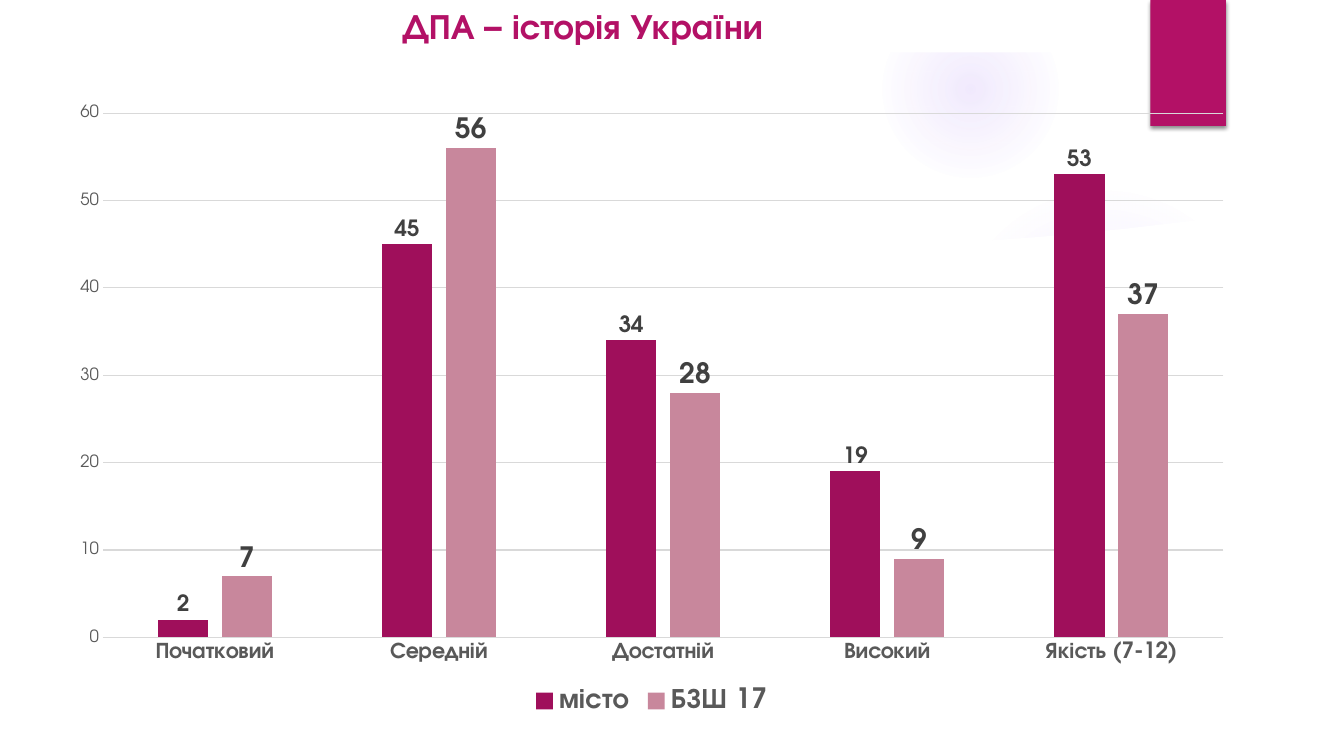
"""Build a slide with a clustered column chart of history exam results."""
import lxml.etree
import pptx
import pptx.chart.data
import pptx.dml.color
import pptx.enum.chart
import pptx.enum.text
import pptx.oxml
import pptx.oxml.ns
import pptx.util
from pptx.util import Inches

RGBColor = pptx.dml.color.RGBColor
MAGENTA = RGBColor(0xB3, 0x11, 0x66)
CITY = RGBColor(0x9F, 0x0F, 0x5B)
SCHOOL = RGBColor(0xC8, 0x87, 0x9C)
GLOW = RGBColor(0x9B, 0x6B, 0xF2)
WHITE = RGBColor(0xFF, 0xFF, 0xFF)
BLACK = RGBColor(0, 0, 0)
AXIS_TEXT = RGBColor(0x59, 0x59, 0x59)
LABEL_TEXT = RGBColor(0x40, 0x40, 0x40)
GRID = RGBColor(0xD9, 0xD9, 0xD9)
FONT = "TeX Gyre Adventor"
NAMESPACE = pptx.oxml.ns.nsdecls("a")

LEVELS = ["Початковий", "Середній", "Достатній", "Високий", "Якість (7-12)"]
RESULTS = [
    ("місто", [2, 45, 34, 19, 53], CITY, 16),
    ("БЗШ 17", [7, 56, 28, 9, 37], SCHOOL, 20),
]
PANEL_CURVE = [
    (12.84, 2.04), (12, 2.17), (11.16, 2.27), (10.32, 2.35), (9.49, 2.41),
    (8.4, 2.46), (7.08, 2.48), (5.83, 2.46), (4.44, 2.41), (3.21, 2.33),
    (2.16, 2.24), (1.35, 2.15), (0.5, 2.04),
]


def format_font(font, size, color, bold=False):
    """Apply the typeface, size, colour and weight to a font."""
    font.name = FONT
    font.size = pptx.util.Pt(size)
    font.color.rgb = color
    font.bold = bold


def write_text(box, text, size, color, bold=False):
    """Write one left-aligned, vertically centred line into a box."""
    frame = box.text_frame
    frame.word_wrap = True
    frame.auto_size = pptx.enum.text.MSO_AUTO_SIZE.NONE
    frame.vertical_anchor = pptx.enum.text.MSO_ANCHOR.MIDDLE
    para = frame.paragraphs[0]
    para.alignment = pptx.enum.text.PP_ALIGN.LEFT
    span = para.add_run()
    span.text = text
    format_font(span.font, size, color, bold)


def fill_plain(shape, color):
    """Give a shape a solid fill with no outline or shadow."""
    shape.shadow.inherit = False
    shape.fill.solid()
    shape.fill.fore_color.rgb = color
    shape.line.fill.background()


def add_rectangle(page, left, top, width, height, color):
    """Add a plain rectangle."""
    shape = page.shapes.add_shape(
        pptx.enum.shapes.MSO_SHAPE.RECTANGLE,
        Inches(left), Inches(top), Inches(width), Inches(height))
    fill_plain(shape, color)
    return shape


def add_glow(page, left, top, size, stops):
    """Add a circle that fades outwards through (position, opacity) stops."""
    circle = page.shapes.add_shape(
        pptx.enum.shapes.MSO_SHAPE.OVAL,
        Inches(left), Inches(top), Inches(size), Inches(size))
    fill_plain(circle, GLOW)
    marks = "".join(
        f'<a:gs pos="{position * 1000}"><a:srgbClr val="{GLOW}">'
        f'<a:alpha val="{opacity * 1000}"/></a:srgbClr></a:gs>'
        for position, opacity in stops)
    gradient = pptx.oxml.parse_xml(
        f'<a:gradFill {NAMESPACE}><a:gsLst>{marks}</a:gsLst><a:path path="circle">'
        '<a:fillToRect l="50000" t="50000" r="50000" b="50000"/></a:path></a:gradFill>')
    properties = circle.element.spPr
    properties.replace(properties.find(pptx.oxml.ns.qn("a:solidFill")), gradient)


def add_panel(page):
    """Add the white panel with a curved upper edge."""
    builder = page.shapes.build_freeform(Inches(0.5), Inches(7))
    corners = [(12.84, 7)] + PANEL_CURVE
    builder.add_line_segments([(Inches(x), Inches(y)) for x, y in corners])
    fill_plain(builder.convert_to_shape(), WHITE)


def add_ribbon(page):
    """Add the magenta ribbon with its soft shadow."""
    ribbon = add_rectangle(page, 11.41, 0, 0.75, 1.25, MAGENTA)
    effects = ribbon.element.spPr.find(pptx.oxml.ns.qn("a:effectLst"))
    effects.append(pptx.oxml.parse_xml(
        f'<a:outerShdw {NAMESPACE} blurRad="{pptx.util.Pt(3)}" dist="{pptx.util.Pt(2)}" '
        f'dir="5400000" rotWithShape="0"><a:srgbClr val="{BLACK}">'
        '<a:alpha val="45000"/></a:srgbClr></a:outerShdw>'))


def place_title(page, text):
    """Position the title above the background shapes and fill it."""
    title = page.shapes.title
    title.left, title.top = Inches(3.89), Inches(0)
    title.width, title.height = Inches(5.41), Inches(0.5)
    write_text(title, text, size=25.2, color=MAGENTA, bold=True)
    title.element.getparent().append(title.element)


def format_axes(chart):
    """Style the category and value axes."""
    levels, scale = chart.category_axis, chart.value_axis
    for axis in (levels, scale):
        axis.major_tick_mark = pptx.enum.chart.XL_TICK_MARK.NONE
        axis.minor_tick_mark = pptx.enum.chart.XL_TICK_MARK.NONE
    format_font(levels.tick_labels.font, 16, AXIS_TEXT, bold=True)
    format_font(scale.tick_labels.font, 12, AXIS_TEXT)
    scale.minimum_scale, scale.maximum_scale, scale.major_unit = 0, 60, 10
    scale.format.line.fill.background()
    for line in (levels.format.line, scale.major_gridlines.format.line):
        line.color.rgb = GRID
        line.width = pptx.util.Pt(0.75)


def add_results_chart(page):
    """Add the clustered columns with labels and a legend."""
    data = pptx.chart.data.CategoryChartData()
    data.categories = LEVELS
    for name, values, _, _ in RESULTS:
        data.add_series(name, values)
    chart = page.shapes.add_chart(
        pptx.enum.chart.XL_CHART_TYPE.COLUMN_CLUSTERED,
        Inches(0.56), Inches(0.92), Inches(11.81), Inches(6.22), data).chart
    format_font(chart.font, 10, BLACK)
    chart.has_title = False
    chart.has_legend = True
    chart.legend.position = pptx.enum.chart.XL_LEGEND_POSITION.BOTTOM
    chart.legend.include_in_layout = False
    format_font(chart.legend.font, 20, AXIS_TEXT, bold=True)
    format_axes(chart)
    plot = chart.plots[0]
    plot.gap_width, plot.overlap = 219, -27
    plot.vary_by_categories = False
    for series, (_, _, color, label_size) in zip(plot.series, RESULTS):
        series.format.fill.solid()
        series.format.fill.fore_color.rgb = color
        series.invert_if_negative = False
        labels = series.data_labels
        labels.show_value = True
        labels.position = pptx.enum.chart.XL_LABEL_POSITION.OUTSIDE_END
        format_font(labels.font, label_size, LABEL_TEXT, bold=True)


def main():
    """Create the deck and save it."""
    deck = pptx.Presentation()
    deck.slide_width, deck.slide_height = Inches(13.33), Inches(7.5)
    page = deck.slides.add_slide(deck.slide_layouts[5])
    add_glow(page, 9.41, 1.83, 3.08, [(0, 7), (36, 6), (69, 0)])
    add_glow(page, 8.75, 0.01, 1.75, [(0, 14), (36, 7), (73, 0)])
    add_panel(page)
    add_rectangle(page, 0, 0, 13.33, 0.52, WHITE)
    add_ribbon(page)
    place_title(page, "ДПА – історія України")
    add_results_chart(page)
    deck.save("out.pptx")


if __name__ == "__main__":
    main()
